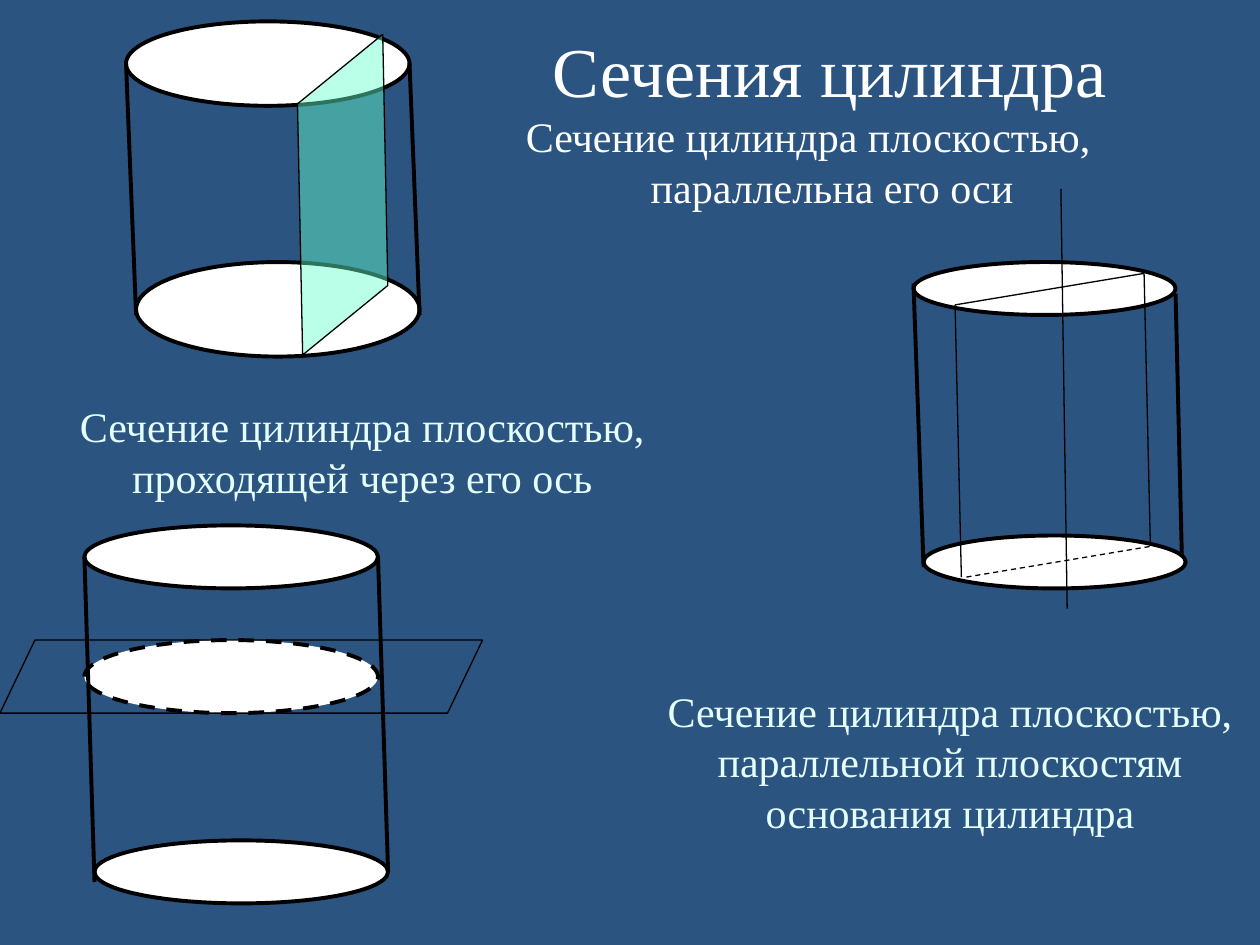
from lxml import etree
from pptx import Presentation
from pptx.dml.color import RGBColor
from pptx.enum import dml, shapes, text
from pptx.oxml import ns
from pptx.util import Inches, Pt

BACK = RGBColor(0x2B, 0x54, 0x81)
WHITE = RGBColor(0xFF, 0xFF, 0xFF)
BLACK = RGBColor(0, 0, 0)
MINT = RGBColor(0x66, 0xFF, 0xCC)
PALE = RGBColor(0xE5, 0xFF, 0xFF)
THICK, THIN = 2.25, 0.75
SHAPE = shapes.MSO_SHAPE


def set_line(line, width, dashed=False):
    line.color.rgb = BLACK
    line.width = Pt(width)
    if dashed:
        line.dash_style = dml.MSO_LINE.DASH


def add_line(s, start, end, width=THIN, dashed=False):
    points = [Inches(v) for v in (*start, *end)]
    cn = s.shapes.add_connector(shapes.MSO_CONNECTOR.STRAIGHT, *points)
    set_line(cn.line, width, dashed)
    etree.SubElement(cn._element.spPr, ns.qn("a:effectLst"))


def add_figure(s, kind, box, fill=None, width=THICK, dashed=False):
    sp = s.shapes.add_shape(kind, *[Inches(v) for v in box])
    sp.shadow.inherit = False
    if fill is None:
        sp.fill.background()
    else:
        sp.fill.solid()
        sp.fill.fore_color.rgb = fill
    set_line(sp.line, width, dashed)
    return sp


def add_plane(s, box, slant, rotation=0, fill=None, alpha=100):
    sp = add_figure(s, SHAPE.PARALLELOGRAM, box, fill, THIN)
    sp.adjustments[0] = slant
    sp.rotation = rotation
    if fill is not None:
        color = sp._element.spPr.find(".//" + ns.qn("a:srgbClr"))
        etree.SubElement(color, ns.qn("a:alpha"), val=str(alpha * 1000))


def add_cylinder(s, bases, sides):
    for box in bases:
        add_figure(s, SHAPE.OVAL, box, WHITE)
    for start, end in sides:
        add_line(s, start, end, THICK)


def add_label(s, box, words, color, size=24, hanging=0,
              anchor=text.MSO_ANCHOR.MIDDLE):
    tf = s.shapes.add_textbox(*[Inches(v) for v in box]).text_frame
    tf.word_wrap = True
    tf.vertical_anchor = anchor
    p = tf.paragraphs[0]
    p.alignment = text.PP_ALIGN.CENTER
    if hanging:
        pPr = p._p.get_or_add_pPr()
        pPr.set("marL", str(Inches(hanging)))
        pPr.set("indent", str(-Inches(hanging)))
    r = p.add_run()
    r.text = words
    for name, value in {"name": "Times New Roman", "size": Pt(size)}.items():
        setattr(r.font, name, value)
    r.font.color.rgb = color


def add_parallel_section(s):
    add_cylinder(s, [(1, 0.17, 2.25, 0.67), (1.08, 2.08, 2.25, 0.75)],
                 [((1, 0.5), (1.08, 2.5)), ((3.25, 0.5), (3.33, 2.5))])
    add_plane(s, (1.67, 0.76, 2.1, 1.57), 0.782, 320.8, MINT, 45)


def add_axial_section(s):
    add_cylinder(s, [(7.25, 2.08, 2.08, 0.42), (7.33, 4.25, 2.08, 0.42)],
                 [((7.25, 2.25), (7.33, 4.5)), ((9.33, 2.33), (9.38, 4.42))])
    add_line(s, (9.08, 2.17), (9.13, 4.33))
    add_line(s, (9.08, 2.17), (7.58, 2.42))
    add_line(s, (7.58, 2.42), (7.63, 4.58))
    add_line(s, (7.67, 4.58), (9.17, 4.33), dashed=True)
    add_line(s, (8.42, 1.5), (8.47, 4.83))


def add_cross_section(s):
    add_figure(s, SHAPE.OVAL, (0.67, 5.08, 2.33, 0.58), WHITE, dashed=True)
    add_cylinder(s, [(0.67, 4.17, 2.33, 0.5), (0.75, 6.67, 2.33, 0.5)],
                 [((0.67, 4.42), (0.75, 7)), ((3, 4.42), (3.08, 6.92))])
    add_plane(s, (0, 5.08, 3.83, 0.58), 0.478)


def main():
    prs = Presentation()
    prs.slide_width, prs.slide_height = Inches(10), Inches(7.5)
    s = prs.slides.add_slide(prs.slide_layouts[6])
    s.background.fill.solid()
    s.background.fill.fore_color.rgb = BACK

    add_parallel_section(s)
    add_axial_section(s)
    add_cross_section(s)

    top = {"hanging": 0.38, "anchor": text.MSO_ANCHOR.TOP}
    add_label(s, (3.92, 0.17, 5.33, 1), "Сечения цилиндра", WHITE, 40, **top)
    add_label(s, (3.75, 0.83, 5.33, 1),
              "Сечение цилиндра плоскостью, параллельна его оси",
              WHITE, **top)
    add_label(s, (0, 3.08, 5.75, 1),
              "Сечение цилиндра плоскостью, проходящей через его ось", PALE)
    add_label(s, (5.08, 5.33, 4.92, 1.42),
              "Сечение цилиндра плоскостью, параллельной плоскостям "
              "основания цилиндра", PALE)
    prs.save("out.pptx")


if __name__ == "__main__":
    main()
